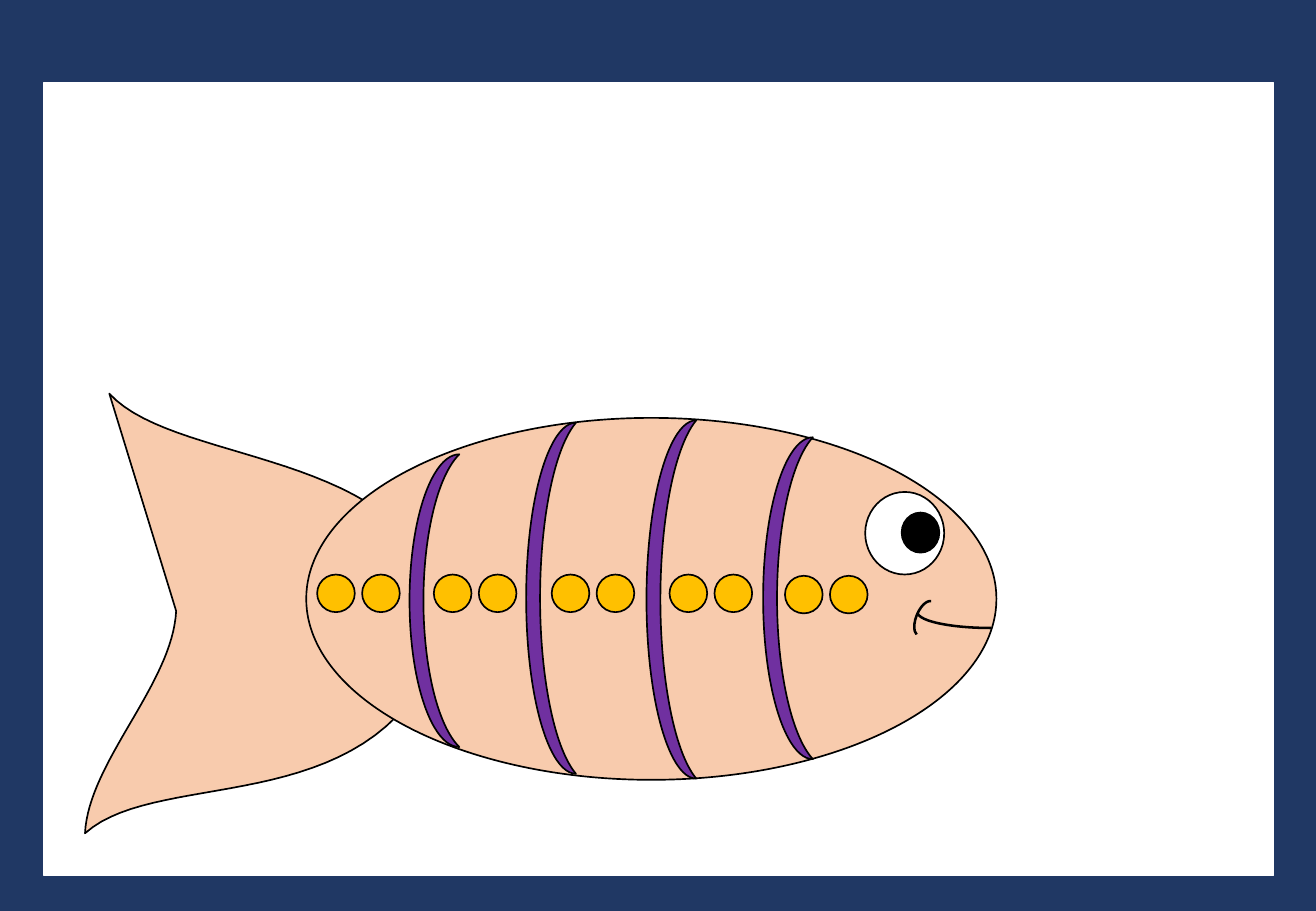
from pptx import Presentation
from pptx.dml.color import RGBColor
from pptx.enum.shapes import MSO_SHAPE
from pptx.util import Pt

PX = 9144  # EMU per px, 100 px to the inch
BLACK, WHITE, NAVY = "000000", "FFFFFF", "203864"
SKIN, PURPLE, GOLD = "F8CBAD", "7030A0", "FFC000"


def style(sp, fill, line=BLACK, width=1):
    sp.shadow.inherit = False
    if fill:
        sp.fill.solid()
        sp.fill.fore_color.rgb = RGBColor.from_string(fill)
    else:
        sp.fill.background()
    sp.line.color.rgb = RGBColor.from_string(line)
    sp.line.width = Pt(width)


def add(shapes, kind, box, fill, line=BLACK, width=1):
    sp = shapes.add_shape(kind, *(v * PX for v in box))
    style(sp, fill, line, width)
    return sp


prs = Presentation()
prs.slide_width, prs.slide_height = 1083 * PX, 750 * PX
s = prs.slides.add_slide(prs.slide_layouts[6])

# Frame and page
add(s.shapes, MSO_SHAPE.RECTANGLE, (0, 0, 1083, 750), NAVY, NAVY)
add(s.shapes, MSO_SHAPE.RECTANGLE, (36, 68, 1012, 653), WHITE, WHITE)

# Tail: Bezier curves sampled into short segments; the third side is straight
fish = s.shapes.add_group_shape().shapes
curves = [
    [(367, 519), (317, 681), (134, 629), (70, 686)],
    [(70, 686), (73, 627), (142, 563), (145, 503)],
    [(90, 324), (147, 387), (359, 367), (367, 519)],
]
STEPS = 32
outline = []
for a, b, c, d in curves:
    for i in range(STEPS + 1):
        t = i / STEPS
        u = 1 - t
        outline.append(tuple(
            round((u**3 * a[k] + 3 * u * u * t * b[k] + 3 * u * t * t * c[k] + t**3 * d[k]) * PX)
            for k in (0, 1)))
fb = fish.build_freeform(*outline[0], scale=1.0)
fb.add_line_segments(outline[1:], close=True)
style(fb.convert_to_shape(), SKIN)

# Body and eye
for box, fill in [
    ((252, 344, 568, 298), SKIN),
    ((712, 405, 65, 68), WHITE),
    ((742, 422, 31, 33), BLACK),
]:
    add(fish, MSO_SHAPE.OVAL, box, fill)

# Stripes
for x, y, h in [(337, 374, 241), (433, 348, 289), (532, 346, 295), (628, 360, 265)]:
    moon = add(s.shapes, MSO_SHAPE.MOON, (x, y, 41, h), PURPLE)
    moon.adjustments[0] = 0.28

# Pairs of dots between the stripes
for x, y in [(261, 473), (357, 473), (454, 473), (551, 473), (646, 474)]:
    for dx in (0, 37):
        add(s.shapes, MSO_SHAPE.OVAL, (x + dx, y, 31, 31), GOLD)

# Mouth
for box, rotation, start, end in [
    ((755, 491, 121, 26), 180, 162, 215.11),
    ((746, 502, 30, 14), 292, 110.62, 215.11),
]:
    arc = add(s.shapes, MSO_SHAPE.ARC, box, None, width=1.5)
    arc.rotation = rotation
    arc.adjustments[0], arc.adjustments[1] = start, end

prs.save("out.pptx")
